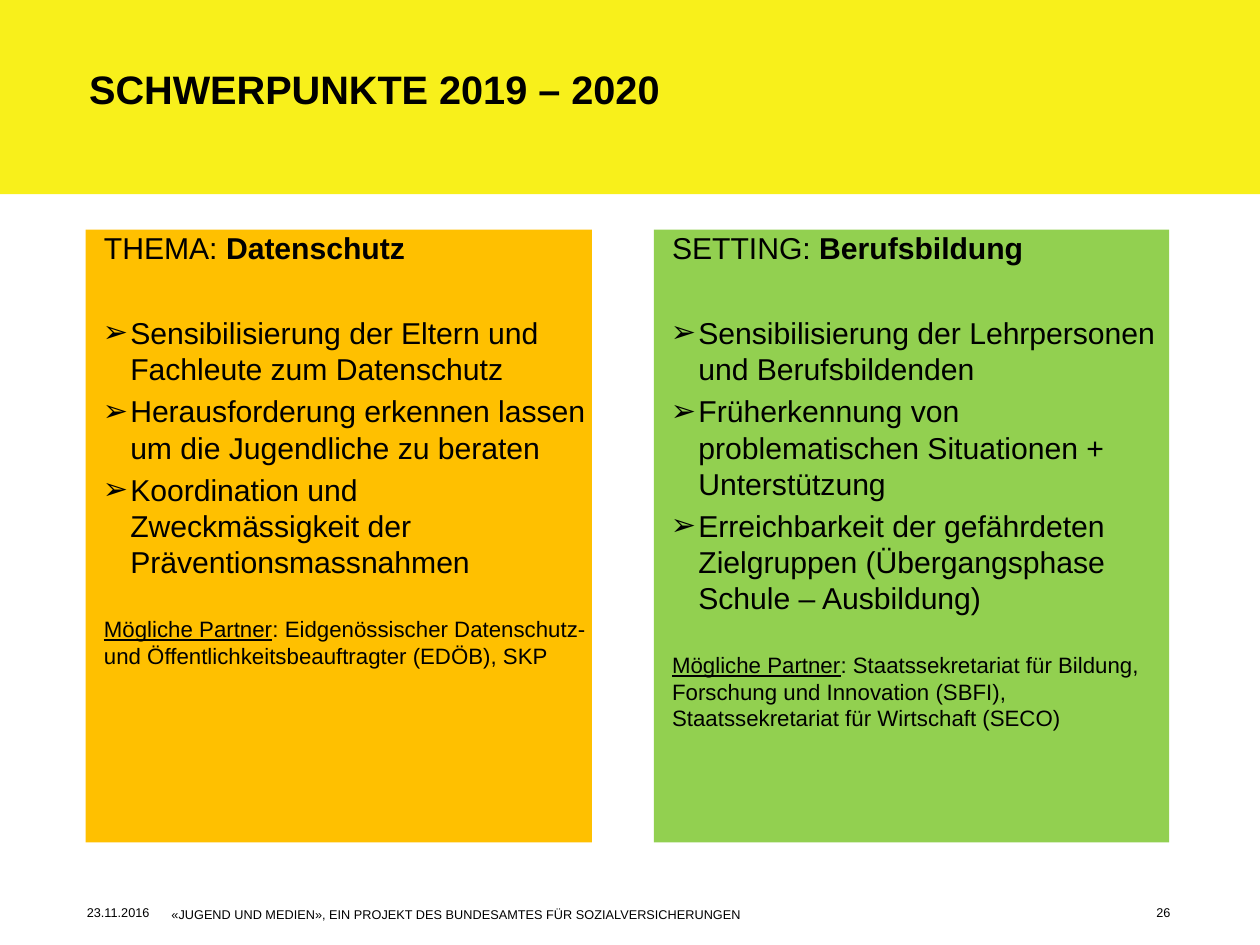
"""Build the slide on the priorities for 2019 and 2020."""
from dataclasses import dataclass

from lxml import etree
from pptx import Presentation
from pptx.dml.color import RGBColor
from pptx.enum.shapes import MSO_SHAPE
from pptx.enum.text import MSO_ANCHOR, PP_ALIGN
from pptx.oxml.ns import qn
from pptx.util import Inches, Pt

RECTANGLE = MSO_SHAPE.RECTANGLE
TOP = MSO_ANCHOR.TOP
LEFT, RIGHT = PP_ALIGN.LEFT, PP_ALIGN.RIGHT

COLORS = {"band": "F8F01B", "theme": "FFC000", "setting": "92D050", "text": "000000"}
FONT = "Arial"
CM_PER_INCH = 2.54
PAGE_WIDTH, PAGE_HEIGHT = 28 / CM_PER_INCH, 21 / CM_PER_INCH
BODY_SIZE, PARTNER_SIZE = 19, 14
TEXT_INDENT, BULLET_INDENT, BULLET_HANG = 0.16, 0.39, 0.24


@dataclass
class Label:
    text: str
    left: float
    top: float
    width: float
    height: float
    size: float = 8
    bold: bool = False
    align: PP_ALIGN = LEFT


@dataclass
class Panel:
    left: float
    width: float
    color: str
    kind: str
    topic: str
    goals: list[str]
    partners: str


LABELS = [
    Label("SCHWERPUNKTE 2019 – 2020", 0.78, 0.57, 9.45, 0.88, 25, True),
    Label("23.11.2016", 0.76, 7.92, 0.66, 0.15),
    Label("«JUGEND UND MEDIEN», EIN PROJEKT DES BUNDESAMTES FÜR SOZIALVERSICHERUNGEN",
          1.5, 7.93, 8.11, 0.16),
    Label("26", 9.93, 7.92, 0.31, 0.23, align=RIGHT),
]

PANELS = [
    Panel(0.75, 4.43, "theme", "THEMA: ", "Datenschutz", [
        "Sensibilisierung der Eltern und Fachleute zum Datenschutz",
        "Herausforderung erkennen lassen um die Jugendliche zu beraten",
        "Koordination und Zweckmässigkeit der Präventionsmassnahmen",
    ], ": Eidgenössischer Datenschutz- und Öffentlichkeitsbeauftragter (EDÖB), SKP"),
    Panel(5.72, 4.51, "setting", "SETTING: ", "Berufsbildung", [
        "Sensibilisierung der Lehrpersonen und Berufsbildenden",
        "Früherkennung von problematischen Situationen + Unterstützung",
        "Erreichbarkeit der gefährdeten Zielgruppen (Übergangsphase Schule – Ausbildung)",
    ], ": Staatssekretariat für Bildung, Forschung und Innovation (SBFI), "
       "Staatssekretariat für Wirtschaft (SECO)"),
]


def prepare_frame(frame) -> None:
    """Remove the insets and wrap the text from the top."""
    frame.margin_left = frame.margin_right = frame.margin_top = frame.margin_bottom = 0
    frame.word_wrap = True
    frame.vertical_anchor = TOP


def style_paragraph(para, size: float, before: float = 0, align: PP_ALIGN = LEFT) -> None:
    """Set the font, spacing and alignment of a paragraph."""
    para.font.name = FONT
    para.font.size = Pt(size)
    para.font.color.rgb = RGBColor.from_string(COLORS["text"])
    para.space_before = Pt(before)
    para.alignment = align


def indent(para, left: float, hang: float = 0) -> None:
    """Indent a paragraph, with a hanging arrow bullet if hang is given."""
    properties = para._p.get_or_add_pPr()
    properties.set("marL", str(Inches(left)))
    properties.set("indent", str(-Inches(hang)))
    if hang:
        etree.SubElement(properties, qn("a:buFont")).set("typeface", FONT)
        etree.SubElement(properties, qn("a:buChar")).set("char", "➢")


def add_rectangle(page, left: float, top: float, width: float, height: float, color: str):
    """Add a plain filled rectangle."""
    box = page.shapes.add_shape(RECTANGLE, Inches(left), Inches(top), Inches(width), Inches(height))
    box.shadow.inherit = False
    box.fill.solid()
    box.fill.fore_color.rgb = RGBColor.from_string(COLORS[color])
    box.line.fill.background()
    return box


def add_label(page, label: Label) -> None:
    """Add one line of text."""
    box = page.shapes.add_textbox(Inches(label.left), Inches(label.top),
                                  Inches(label.width), Inches(label.height))
    prepare_frame(box.text_frame)
    para = box.text_frame.paragraphs[0]
    para.text = label.text
    style_paragraph(para, label.size, align=label.align)
    para.font.bold = label.bold


def add_panel(page, panel: Panel) -> None:
    """Add a coloured panel with heading, goals and partners."""
    frame = add_rectangle(page, panel.left, 2.01, panel.width, 5.36, panel.color).text_frame
    prepare_frame(frame)

    heading = frame.paragraphs[0]
    indent(heading, TEXT_INDENT)
    style_paragraph(heading, BODY_SIZE)
    heading.add_run().text = panel.kind
    topic = heading.add_run()
    topic.text = panel.topic
    topic.font.bold = True

    for index, goal in enumerate(panel.goals):
        para = frame.add_paragraph()
        para.text = goal
        indent(para, BULLET_INDENT, BULLET_HANG)
        style_paragraph(para, BODY_SIZE, before=3.8 if index else 30.5)

    partners = frame.add_paragraph()
    indent(partners, TEXT_INDENT)
    style_paragraph(partners, PARTNER_SIZE, before=22.4)
    caption = partners.add_run()
    caption.text = "Mögliche Partner"
    caption.font.underline = True
    partners.add_run().text = panel.partners


def main() -> None:
    """Draw the slide and save the deck."""
    deck = Presentation()
    deck.slide_width, deck.slide_height = Inches(PAGE_WIDTH), Inches(PAGE_HEIGHT)
    page = deck.slides.add_slide(deck.slide_layouts[6])
    add_rectangle(page, 0, 0, PAGE_WIDTH, 1.7, "band")
    for label in LABELS:
        add_label(page, label)
    for panel in PANELS:
        add_panel(page, panel)
    deck.save("out.pptx")


if __name__ == "__main__":
    main()
